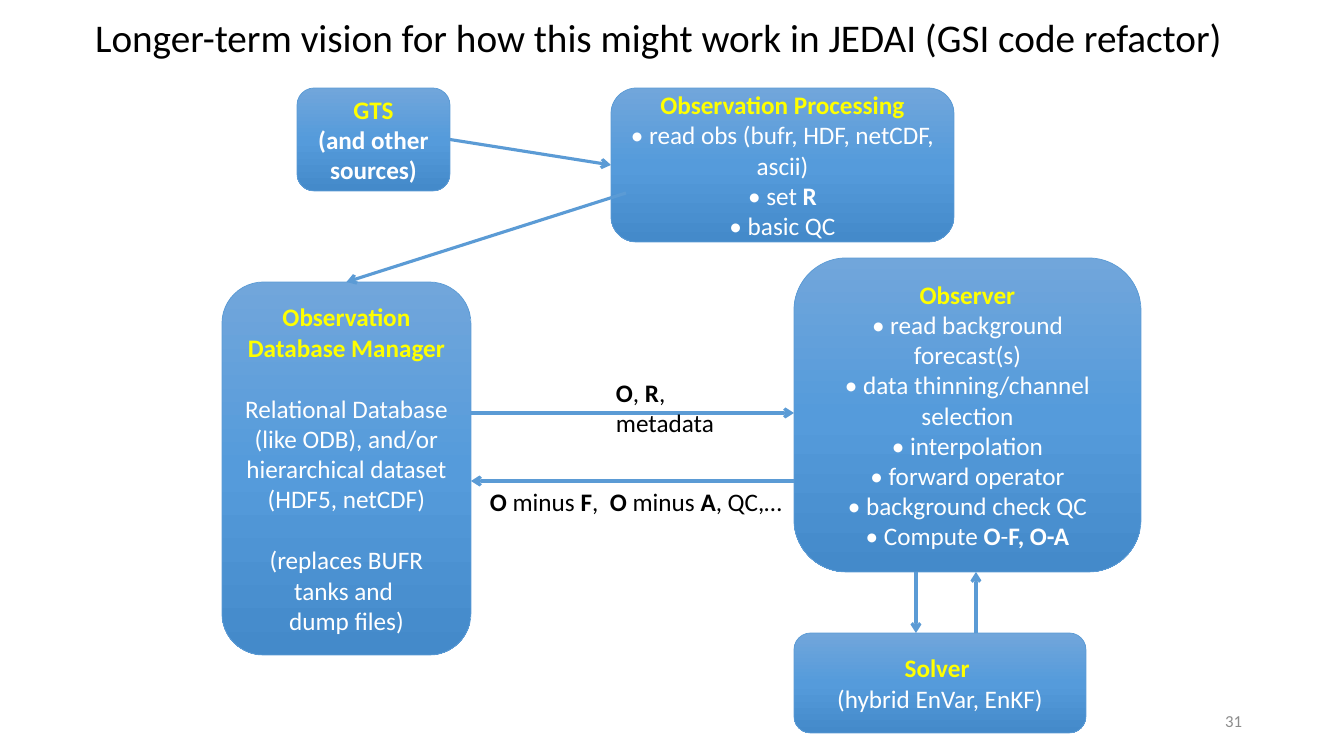
from copy import deepcopy

from pptx import Presentation
from pptx import util as u
from pptx.dml.color import RGBColor
from pptx.enum import shapes, text
from pptx.oxml.ns import qn
from pptx.oxml.xmlchemy import OxmlElement

PX = 914400 / 100.8
TOP, LEFT, RIGHT = 0, 1, 3
BLUE, YELLOW, WHITE, BLACK, GREY = "5B9BD5", "FFFF00", "FFFFFF", "000000", "8C8C8C"
GRADIENT = [(0, "71A6DB"), (0.5, "559BDB"), (1, "448ACA")]
ALIGN = text.PP_ALIGN


def px(*lengths):
    return [u.Emu(round(n * PX)) for n in lengths]


def rgb(value):
    return RGBColor.from_string(value)


def write(paragraph, words, color, size=18, align=ALIGN.LEFT, bold=False):
    """Write words into a paragraph; **double stars** mark bold parts."""
    paragraph.alignment = align
    font = paragraph.font
    font.name, font.size, font.bold = "Calibri", u.Pt(size), bold
    font.color.rgb = rgb(color)
    for i, part in enumerate(words.split("**")):
        if part:
            run = paragraph.add_run()
            run.text = part
            if i % 2:
                run.font.bold = True


def add_node(slide, box, heading, lines, gaps=()):
    """Rounded box with a yellow heading; gaps lists lines set one line lower."""
    node = slide.shapes.add_shape(shapes.MSO_SHAPE.ROUNDED_RECTANGLE, *px(*box))
    node.shadow.inherit = False
    node.fill.gradient()
    node.fill.gradient_angle = 270
    stops = node._element.spPr.find(".//" + qn("a:gsLst"))
    stops.insert(1, deepcopy(stops[0]))
    for stop, (position, color) in zip(node.fill.gradient_stops, GRADIENT):
        stop.position = position
        stop.color.rgb = rgb(color)
    node.line.color.rgb = rgb(BLUE)
    node.line.width = u.Pt(0.5)

    frame = node.text_frame
    frame.word_wrap = True
    frame.vertical_anchor = text.MSO_ANCHOR.MIDDLE
    write(frame.paragraphs[0], heading, YELLOW, align=ALIGN.CENTER, bold=True)
    for i, words in enumerate(lines):
        paragraph = frame.add_paragraph()
        write(paragraph, words, WHITE, align=ALIGN.CENTER)
        if i in gaps:
            paragraph.space_before = u.Pt(22)
    return node


def add_arrow(slide, start, end, source=None, target=None):
    """Arrow between two points; source and target are (node, side) joints."""
    arrow = slide.shapes.add_connector(
        shapes.MSO_CONNECTOR.STRAIGHT, *px(*start, *end))
    if source:
        arrow.begin_connect(*source)
    if target:
        arrow.end_connect(*target)
    arrow.line.color.rgb = rgb(BLUE)
    arrow.line.width = u.Pt(2.25)
    head = OxmlElement("a:tailEnd")
    head.set("type", "arrow")
    arrow.line._get_or_add_ln().append(head)
    arrow._element.spPr.append(OxmlElement("a:effectLst"))


def add_label(slide, box, words, wrap=True, color=BLACK, size=18,
              align=ALIGN.LEFT, anchor=text.MSO_ANCHOR.TOP):
    frame = slide.shapes.add_textbox(*px(*box)).text_frame
    frame.word_wrap = wrap
    frame.vertical_anchor = anchor
    write(frame.paragraphs[0], words, color, size, align)


def draw_title(slide, box, words):
    title = slide.shapes.title
    title.left, title.top, title.width, title.height = px(*box)
    frame = title.text_frame
    frame.auto_size = text.MSO_AUTO_SIZE.NONE
    frame.word_wrap = False
    frame.vertical_anchor = text.MSO_ANCHOR.TOP
    write(frame.paragraphs[0], words, BLACK, size=28)


def draw_ingest(slide, x, y):
    """Incoming data and its processing."""
    gts = add_node(slide, (x, y, 153, 103), "GTS", ["**(and other sources)**"])
    processing = add_node(
        slide, (x + 314, y, 343, 154), "Observation Processing",
        ["• read obs (bufr, HDF, netCDF, ascii)", "• set **R**", "• basic QC"])
    add_arrow(slide, (x + 153, y + 51), (x + 314, y + 77),
              (gts, RIGHT), (processing, LEFT))


def draw_exchange(slide, x, y):
    """Database manager and observer, with the data they pass each other."""
    manager = add_node(
        slide, (x, y + 24, 249, 373), "Observation Database Manager",
        ["Relational Database (like ODB), and/or hierarchical dataset (HDF5, netCDF)",
         "(replaces BUFR tanks and ", "dump files)"], gaps=(0, 1))
    add_node(
        slide, (x + 572, y, 347, 314), "Observer",
        ["• read background forecast(s)", "• data thinning/channel selection",
         "• interpolation", "• forward operator", "• background check QC",
         "• Compute **O**-**F, O-A**"])
    add_arrow(slide, (x + 404, y - 65), (x + 124, y + 24), target=(manager, TOP))
    add_arrow(slide, (x + 249, y + 155), (x + 572, y + 155))
    add_arrow(slide, (x + 572, y + 223), (x + 249, y + 223))
    add_label(slide, (x + 384, y + 114, 131, 71), "**O**, **R**, metadata")
    add_label(slide, (x + 258, y + 223, 316, 40),
              "**O** minus **F**,  **O** minus **A**, QC,…", wrap=False)


def draw_solver(slide, x, y):
    """Solver and its loop with the observer above."""
    add_node(slide, (x, y + 61, 292, 100), "Solver ", ["(hybrid EnVar, EnKF)"])
    add_arrow(slide, (x + 122, y), (x + 122, y + 61))
    add_arrow(slide, (x + 182, y + 61), (x + 182, y))


def main():
    deck = Presentation()
    deck.slide_width, deck.slide_height = px(1344, 756)
    slide = deck.slides.add_slide(deck.slide_layouts[5])

    draw_title(slide, (85, 8, 1155, 57),
               "Longer-term vision for how this might work in JEDAI (GSI code refactor)")
    draw_ingest(slide, 297, 88)
    draw_exchange(slide, 222, 258)
    draw_solver(slide, 794, 572)

    # Page number
    add_label(slide, (950, 701, 302, 40), "31", color=GREY, size=12,
              align=ALIGN.RIGHT, anchor=text.MSO_ANCHOR.MIDDLE)
    deck.save("out.pptx")


if __name__ == "__main__":
    main()
